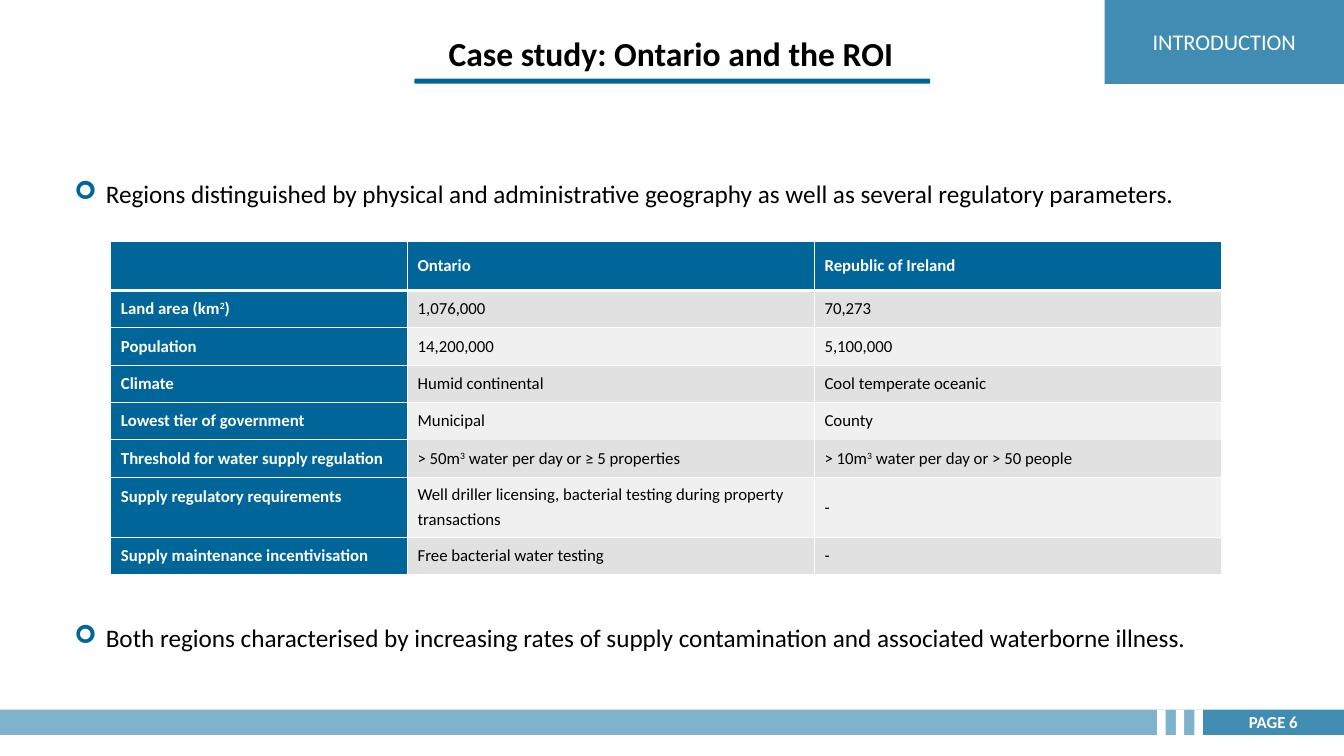
from dataclasses import dataclass
from typing import Any, Optional

from lxml.etree import SubElement
from pptx import Presentation
from pptx.dml.color import RGBColor
from pptx.enum.shapes import MSO_SHAPE as Shape
from pptx.enum.text import MSO_ANCHOR as Anchor, PP_ALIGN as Align
from pptx.oxml.ns import qn
from pptx.util import Pt

BLUE = RGBColor(0x00, 0x66, 0x99)
WHITE = RGBColor(0xFF, 0xFF, 0xFF)
BLACK = RGBColor(0x00, 0x00, 0x00)
GREY = RGBColor(0xE1, 0xE1, 0xE1)
LIGHT_GREY = RGBColor(0xF0, 0xF0, 0xF0)
FONT = "Calibri"
NO_STYLE = "{2D5ABB26-0587-4C30-8999-92F81FD0307C}"


@dataclass
class Block:
    left: float
    top: float
    width: float
    height: float
    fill: RGBColor = BLUE
    alpha: int = 100
    text: str = ""
    size: float = 12
    bold: bool = False
    kind: Any = Shape.RECTANGLE
    adjust: Optional[float] = None


@dataclass
class Bullet:
    top: float
    text: str


STRIPES = [Block(826.6 + 13.3 * i, 506.9, 6, 18, WHITE) for i in range(3)]
BLOCKS = [
    Block(859, 506.9, 101, 18, alpha=75, text="PAGE 6", bold=True),
    Block(0, 506.9, 859, 18, alpha=50),
    *STRIPES,
    Block(789, 0, 171, 60, alpha=75, text="INTRODUCTION", size=16),
    Block(296, 56.2, 368.5, 3.6, kind=Shape.ROUNDED_RECTANGLE, adjust=0.24),
]
BULLETS = [
    Bullet(113, "Regions distinguished by physical and administrative geography "
                "as well as several regulatory parameters."),
    Bullet(430.5, "Both regions characterised by increasing rates of supply "
                  "contamination and associated waterborne illness."),
]
COLUMNS = [211.9, 290.7, 290.7]
HEIGHTS = [36, 26.7, 26.7, 26.7, 26.7, 26.7, 43, 26.7]
ROWS = [
    ["", "Ontario", "Republic of Ireland"],
    ["Land area (km^2^)", "1,076,000", "70,273"],
    ["Population", "14,200,000", "5,100,000"],
    ["Climate", "Humid continental", "Cool temperate oceanic"],
    ["Lowest tier of government", "Municipal", "County"],
    ["Threshold for water supply regulation",
     "> 50m^3^ water per day or ≥ 5 properties",
     "> 10m^3^ water per day or > 50 people"],
    ["Supply regulatory requirements",
     "Well driller licensing, bacterial testing during property\ntransactions", "-"],
    ["Supply maintenance incentivisation", "Free bacterial water testing", "-"],
]
GOVERNMENT_ROW = 4
REQUIREMENTS_ROW = 6


def add_runs(p: Any, text: str, size: float, color: RGBColor, bold: bool = False) -> None:
    for i, part in enumerate(text.split("^")):
        r = p.add_run()
        r.text = part
        for name, value in {"name": FONT, "size": Pt(size), "bold": bold}.items():
            setattr(r.font, name, value)
        r.font.color.rgb = color
        if i % 2:
            r._r.get_or_add_rPr().set("baseline", "30000")


def add_block(s: Any, block: Block) -> None:
    sp = s.shapes.add_shape(block.kind, Pt(block.left), Pt(block.top),
                            Pt(block.width), Pt(block.height))
    sp.shadow.inherit = False
    sp.line.fill.background()
    sp.fill.solid()
    sp.fill.fore_color.rgb = block.fill
    if block.adjust is not None:
        sp.adjustments[0] = block.adjust
    if block.alpha < 100:
        color = sp._element.spPr.find(qn("a:solidFill"))[0]
        SubElement(color, qn("a:alpha"), val=str(block.alpha * 1000))
    if block.text:
        tf = sp.text_frame
        tf.vertical_anchor = Anchor.MIDDLE
        p = tf.paragraphs[0]
        p.alignment = Align.CENTER
        add_runs(p, block.text, block.size, WHITE, block.bold)


def add_text_frame(s: Any, left: float, top: float, width: float, height: float) -> Any:
    tf = s.shapes.add_textbox(Pt(left), Pt(top), Pt(width), Pt(height)).text_frame
    tf.word_wrap = True
    return tf


def add_title(s: Any) -> None:
    tf = add_text_frame(s, 295, 21, 368.5, 34)
    tf.vertical_anchor = Anchor.MIDDLE
    p = tf.paragraphs[0]
    p.alignment = Align.CENTER
    add_runs(p, "Case study: Ontario and the ROI", 24, BLACK, True)


def add_bullet(s: Any, bullet: Bullet) -> None:
    p = add_text_frame(s, 46, bullet.top, 859, 39).paragraphs[0]
    p.alignment = Align.JUSTIFY
    p.line_spacing = 1.5
    pPr = p._p.get_or_add_pPr()
    indent = Pt(22.5)
    pPr.set("marL", str(indent))
    pPr.set("indent", str(-indent))
    SubElement(SubElement(pPr, qn("a:buClr")), qn("a:srgbClr"), val=str(BLUE))
    SubElement(pPr, qn("a:buFont"), typeface="Wingdings")
    SubElement(pPr, qn("a:buChar"), char="➢")
    add_runs(p, bullet.text, 18, BLACK)


def border_widths(row: int, col: int) -> dict[str, float]:
    widths = {"L": 1, "R": 1, "T": 3 if row < 2 else 1, "B": 3 if row == 0 else 1}
    if col:
        hidden = {GOVERNMENT_ROW - 1: "B", GOVERNMENT_ROW + 1: "T",
                  GOVERNMENT_ROW: "RTB" if col == 1 else "LRTB"}.get(row, "")
        widths.update(dict.fromkeys(hidden, 0))
    return widths


def add_borders(cell: Any, widths: dict[str, float]) -> None:
    tcPr = cell._tc.get_or_add_tcPr()
    for side, width in widths.items():
        if width:
            ln = SubElement(tcPr, qn(f"a:ln{side}"), w=str(Pt(width)))
            fill = SubElement(ln, qn("a:solidFill"))
            SubElement(fill, qn("a:srgbClr"), val=str(WHITE))


def fill_cell(cell: Any, row: int, col: int, text: str) -> None:
    heading = row == 0 or col == 0
    add_borders(cell, border_widths(row, col))
    cell.fill.solid()
    cell.fill.fore_color.rgb = BLUE if heading else GREY if row % 2 else LIGHT_GREY
    cell.vertical_anchor = Anchor.MIDDLE
    if row == REQUIREMENTS_ROW and col == 0:
        cell.margin_bottom = Pt(18)
    tf = cell.text_frame
    lines = text.split("\n")
    for i, line in enumerate(lines):
        p = tf.add_paragraph() if i else tf.paragraphs[0]
        if i < len(lines) - 1:
            p.space_after = Pt(3)
        if line:
            add_runs(p, line, 12, WHITE if heading else BLACK, heading)


def add_regions_table(s: Any) -> None:
    frame = s.shapes.add_table(len(ROWS), len(COLUMNS), Pt(79.2), Pt(171.5),
                               Pt(sum(COLUMNS)), Pt(sum(HEIGHTS)))
    table = frame.table
    table._tbl.tblPr.find(qn("a:tableStyleId")).text = NO_STYLE
    for column, width in zip(table.columns, COLUMNS):
        column.width = Pt(width)
    for i, (height, texts) in enumerate(zip(HEIGHTS, ROWS)):
        table.rows[i].height = Pt(height)
        for j, text in enumerate(texts):
            fill_cell(table.cell(i, j), i, j, text)


def main() -> None:
    prs = Presentation()
    prs.slide_width, prs.slide_height = Pt(960), Pt(540)
    s = prs.slides.add_slide(prs.slide_layouts[6])
    for block in BLOCKS:
        add_block(s, block)
    add_title(s)
    add_regions_table(s)
    for bullet in BULLETS:
        add_bullet(s, bullet)
    prs.save("out.pptx")


if __name__ == "__main__":
    main()
